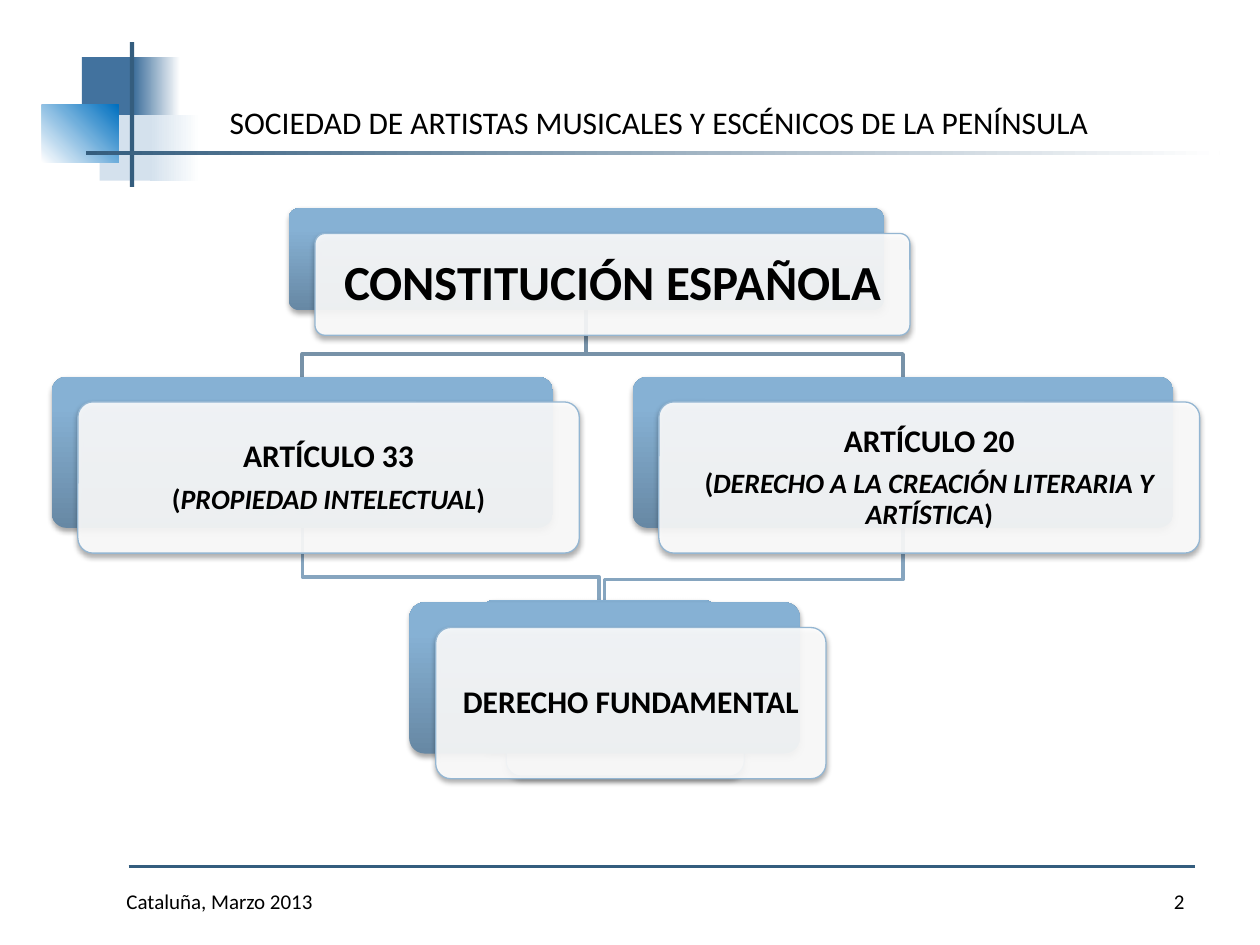
from dataclasses import dataclass

from pptx import Presentation
from pptx.dml.color import RGBColor as Rgb
from pptx.enum.shapes import MSO_CONNECTOR as Link, MSO_SHAPE as Kind
from pptx.enum.text import MSO_ANCHOR as Anchor, PP_ALIGN as Align
from pptx.oxml.ns import qn
from pptx.oxml.xmlchemy import OxmlElement as Node
from pptx.util import Pt


@dataclass(frozen=True)
class Theme:
    """Colours, type sizes and font."""
    font: str = "Calibri"
    ink: str = "000000"
    paper: str = "FFFFFF"
    navy: str = "345D7E"
    steel: str = "42729E"
    mist: str = "D4E1ED"
    azure: str = "0070C0"
    low: str = "6788A4"
    high: str = "86B1D4"
    edge: str = "94B6D2"
    trunk: str = "7792A8"
    twig: str = "86A5BF"
    huge: int = 28
    head: int = 18
    note: int = 16
    small: int = 12


T = Theme()
STEP = (15, 14.4)


def color(code):
    """Turn a hex code into a colour."""
    return Rgb.from_string(code)


def write(para, text, size=T.head, bold=False, italic=False, align=Align.CENTER):
    """Add formatted text to a paragraph."""
    para.alignment = align
    run = para.add_run()
    run.text = text
    font = run.font
    font.name, font.size = T.font, Pt(size)
    font.bold, font.italic = bold, italic
    font.color.rgb = color(T.ink)


def block(slide, box, fill, end=None, angle=0, stop=1, kind=Kind.RECTANGLE):
    """Draw a shape with a plain or gradient fill and no line."""
    shape = slide.shapes.add_shape(kind, *map(Pt, box))
    shape.shadow.inherit = False
    shape.line.fill.background()
    if end:
        shape.fill.gradient()
        shape.fill.gradient_angle = angle
        first, last = shape.fill.gradient_stops
        first.color.rgb, last.color.rgb = color(fill), color(end)
        first.position, last.position = 0, stop
    else:
        shape.fill.solid()
        shape.fill.fore_color.rgb = color(fill)
    return shape


def shade(shape):
    """Give a shape a soft shadow below it."""
    drop = Node("a:outerShdw")
    for key, value in (("blurRad", Pt(3.1)), ("dist", Pt(1.8)),
                       ("dir", 5400000), ("rotWithShape", 0)):
        drop.set(key, str(int(value)))
    tint = Node("a:srgbClr")
    tint.set("val", T.ink)
    alpha = Node("a:alpha")
    alpha.set("val", "35000")
    tint.append(alpha)
    drop.append(tint)
    shape.element.spPr.find(qn("a:effectLst")).append(drop)


def card(slide, box, head="", note="", size=T.head):
    """Draw a blue card with a clear, offset card on top."""
    x, y, w, h = box
    back = block(slide, box, T.low, T.high, 90, 0.8, Kind.ROUNDED_RECTANGLE)
    front = block(slide, (x + STEP[0], y + STEP[1], w, h), T.paper,
                  kind=Kind.ROUNDED_RECTANGLE)
    for shape in (back, front):
        shape.adjustments[0] = 0.1
        shade(shape)
    alpha = Node("a:alpha")
    alpha.set("val", "90000")
    front.element.spPr.find(qn("a:solidFill"))[0].append(alpha)
    front.line.color.rgb = color(T.edge)
    front.line.width = Pt(0.75)
    if not head:
        return
    frame = front.text_frame
    frame.word_wrap = True
    frame.vertical_anchor = Anchor.MIDDLE
    frame.margin_left = frame.margin_right = Pt(5.5)
    frame.margin_top = frame.margin_bottom = Pt(5.5)
    top = frame.paragraphs[0]
    top.line_spacing = 0.9
    write(top, head, size=size, bold=True)
    if note:
        top.space_after = Pt(6.3)
        para = frame.add_paragraph()
        para.line_spacing = 0.9
        for part, slant in (("(", False), (note, True), (")", False)):
            write(para, part, size=T.note, bold=True, italic=slant)


def branch(slide, start, end, tone):
    """Draw a bent line that turns just above its end."""
    (x, y), (u, v) = start, end
    bend = v - 13
    pen = slide.shapes.build_freeform(Pt(x), Pt(y))
    pen.add_line_segments([(Pt(a), Pt(b)) for a, b in ((x, bend), (u, bend), (u, v))],
                          close=False)
    shape = pen.convert_to_shape()
    shape.shadow.inherit = False
    shape.fill.background()
    shape.line.color.rgb = color(tone)
    shape.line.width = Pt(2)


def tree(slide, box):
    """Place the chart of rights in a box."""
    x, y, w, h = box
    tall, row, base = 86.4, y + 96.3, y + 225.2
    root = (x + 135.5, y, 340, 58.2)
    left = (x, row, 286.5, tall)
    right = (x + w - STEP[0] - 309, row, 309, tall)
    rear = (x + 244.8, base - 1.5, 136, tall)
    goal = (x + 204.5, base, 223, tall)

    def top(spot):
        """Find the middle of a card's top side."""
        return spot[0] + spot[2] / 2, spot[1]

    def foot(spot):
        """Find the middle of a card's bottom side."""
        return spot[0] + spot[2] / 2, spot[1] + spot[3]

    for start, end, tone in ((foot(right), top(goal), T.twig),
                             (foot(root), top(right), T.trunk),
                             (foot(left), top(rear), T.twig),
                             (foot(root), top(left), T.trunk)):
        branch(slide, start, end, tone)
    card(slide, root, "CONSTITUCIÓN ESPAÑOLA", size=T.huge)
    card(slide, left, "ARTÍCULO 33", "PROPIEDAD INTELECTUAL")
    card(slide, rear)
    card(slide, right, "ARTÍCULO 20", "DERECHO A LA CREACIÓN LITERARIA Y ARTÍSTICA")
    card(slide, goal, "DERECHO FUNDAMENTAL")


def header(slide, box):
    """Place the square motif, the rules and the title."""
    x, y, w, h = box
    for spot, fill, end, angle in (
            ((22.8, 8.6, 34.6, 37.4), T.steel, None, 0),
            ((53, 8.6, 26, 37.4), T.steel, T.paper, 0),
            ((32.9, 41.8, 33.1, 37.4), T.mist, None, 0),
            ((61.7, 41.8, 28.8, 37.4), T.mist, T.paper, 0),
            ((0, 36, 44, 33.1), T.paper, T.azure, 45),
            ((50.2, 0, 2.4, h), T.navy, None, 0),
            ((25.2, 62.6, w - 25.2, 2.2), T.navy, T.paper, 0)):
        block(slide, (x + spot[0], y + spot[1], *spot[2:]), fill, end, angle)
    title = slide.shapes.title
    title.left, title.top = Pt(x + 100), Pt(y + 31.4)
    title.width, title.height = Pt(556.6), Pt(29)
    frame = title.text_frame
    frame.vertical_anchor = Anchor.MIDDLE
    write(frame.paragraphs[0],
          "SOCIEDAD DE ARTISTAS MUSICALES Y ESCÉNICOS DE LA PENÍNSULA",
          align=Align.LEFT)


def footer(slide, box):
    """Place the bottom rule, the date and the page number."""
    x, y, w, h = box
    rule = slide.shapes.add_connector(Link.STRAIGHT, Pt(x + 62), Pt(y),
                                      Pt(x + w - 1.4), Pt(y))
    rule.line.color.rgb = color(T.navy)
    rule.line.width = Pt(1.5)
    rule.element.spPr.append(Node("a:effectLst"))
    for left, wide, text, align in ((x, 228, "Cataluña, Marzo 2013", Align.CENTER),
                                    (x + w - 168, 168, "2", Align.RIGHT)):
        label = slide.shapes.add_textbox(Pt(left), Pt(y + 5), Pt(wide), Pt(h - 5))
        frame = label.text_frame
        frame.word_wrap = True
        frame.vertical_anchor = Anchor.MIDDLE
        write(frame.paragraphs[0], text, size=T.small, align=align)


def main():
    """Build and save the slide."""
    deck = Presentation()
    deck.slide_width, deck.slide_height = Pt(720), Pt(540)
    slide = deck.slides.add_slide(deck.slide_layouts[5])
    header(slide, (24, 24, 673, 82.8))
    tree(slide, (29.5, 119, 656, 327))
    footer(slide, (11.5, 495.3, 672.5, 34))
    deck.save("out.pptx")


if __name__ == "__main__":
    main()
